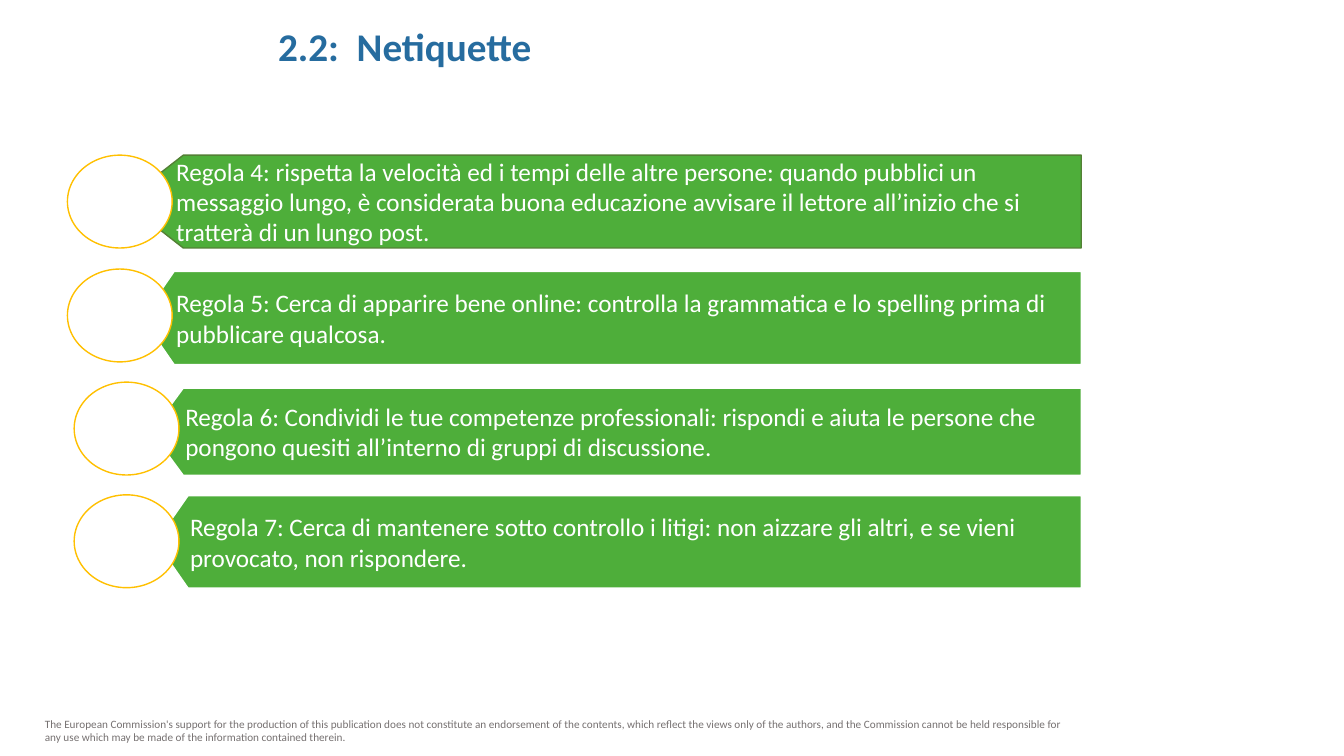
from dataclasses import dataclass

from pptx import Presentation
from pptx.dml.color import RGBColor
from pptx.enum.shapes import MSO_SHAPE
from pptx.enum.text import MSO_ANCHOR, PP_ALIGN
from pptx.shapes.autoshape import Shape
from pptx.slide import Slide
from pptx.text.text import TextFrame
from pptx.util import Cm, Pt

WHITE = RGBColor(0xFF, 0xFF, 0xFF)
GREEN = RGBColor(0x4E, 0xAE, 0x3A)
FOREST = RGBColor(0x53, 0x80, 0x35)
GOLD = RGBColor(0xFF, 0xC0, 0x00)
BLUE = RGBColor(0x26, 0x6C, 0x9F)
GREY = RGBColor(0x76, 0x71, 0x71)

RIGHT = 27.25
DISC_WIDTH = 2.64
DISC_HEIGHT = 2.34


@dataclass(frozen=True)
class Rule:
    text: str
    left: float
    top: float
    height: float
    disc_left: float
    disc_top: float
    notch: float = 0.81
    edge: RGBColor = WHITE
    inset: tuple[float, float, float] = (0.86, 0.23, 0.13)


RULES = [
    Rule("Regola 4: rispetta la velocità ed i tempi delle altre persone: quando pubblici un "
         "messaggio lungo, è considerata buona educazione avvisare il lettore all’inizio che si "
         "tratterà di un lungo post.",
         3.12, 3.91, 2.34, 1.7, 3.91, 1.5, FOREST, (1.32, 0.28, 0.15)),
    Rule("Regola 5: Cerca di apparire bene online: controlla la grammatica e lo spelling prima di "
         "pubblicare qualcosa.",
         3.58, 6.84, 2.35, 1.7, 6.78),
    Rule("Regola 6: Condividi le tue competenze professionali: rispondi e aiuta le persone che "
         "pongono quesiti all’interno di gruppi di discussione.",
         3.81, 9.78, 2.2, 1.87, 9.63),
    Rule("Regola 7: Cerca di mantenere sotto controllo i litigi: non aizzare gli altri, e se vieni "
         "provocato, non rispondere.",
         3.93, 12.49, 2.33, 1.87, 12.47),
]


def write(frame: TextFrame, text: str, size: float, color: RGBColor,
          bold: bool = False, align: PP_ALIGN = PP_ALIGN.LEFT) -> None:
    frame.word_wrap = True
    frame.text = text
    line = frame.paragraphs[0]
    line.alignment = align
    for run in line.runs:
        run.font.name = "Calibri"
        run.font.size = Pt(size)
        run.font.bold = bold
        run.font.color.rgb = color


def paint(shape: Shape, fill: RGBColor, edge: RGBColor) -> None:
    shape.shadow.inherit = False
    shape.fill.solid()
    shape.fill.fore_color.rgb = fill
    shape.line.color.rgb = edge
    shape.line.width = Pt(1)


def draw_rule(slide: Slide, rule: Rule) -> None:
    neck = rule.left + rule.notch
    base = rule.top + rule.height
    points = [(neck, base), (rule.left, rule.top + rule.height / 2),
              (neck, rule.top), (RIGHT, rule.top)]
    pen = slide.shapes.build_freeform(Cm(RIGHT), Cm(base))
    pen.add_line_segments([(Cm(x), Cm(y)) for x, y in points], close=True)
    banner = pen.convert_to_shape()
    paint(banner, GREEN, rule.edge)
    frame = banner.text_frame
    left, right, side = rule.inset
    frame.margin_left, frame.margin_right = Cm(left), Cm(right)
    frame.margin_top = frame.margin_bottom = Cm(side)
    frame.vertical_anchor = MSO_ANCHOR.MIDDLE
    write(frame, rule.text, 18, WHITE)

    disc = slide.shapes.add_shape(MSO_SHAPE.OVAL, Cm(rule.disc_left), Cm(rule.disc_top),
                                  Cm(DISC_WIDTH), Cm(DISC_HEIGHT))
    paint(disc, WHITE, GOLD)


def main() -> None:
    deck = Presentation()
    deck.slide_width, deck.slide_height = Cm(33.87), Cm(19.05)
    slide = deck.slides.add_slide(deck.slide_layouts[6])

    footer = slide.shapes.add_textbox(Cm(0.88), Cm(17.94), Cm(26.57), Cm(0.94))
    write(footer.text_frame,
          "The European Commission's support for the production of this publication does not "
          "constitute an endorsement of the contents, which reflect the views only of the authors, "
          "and the Commission cannot be held responsible for any use which may be made of the "
          "information contained therein.", 8, GREY)

    title = slide.shapes.add_textbox(Cm(6.76), Cm(0.25), Cm(10.19), Cm(2))
    write(title.text_frame, "2.2:  Netiquette", 28, BLUE, True, PP_ALIGN.JUSTIFY)
    title.text_frame.paragraphs[0].line_spacing = 1.15

    for rule in RULES:
        draw_rule(slide, rule)

    deck.save("out.pptx")


if __name__ == "__main__":
    main()
